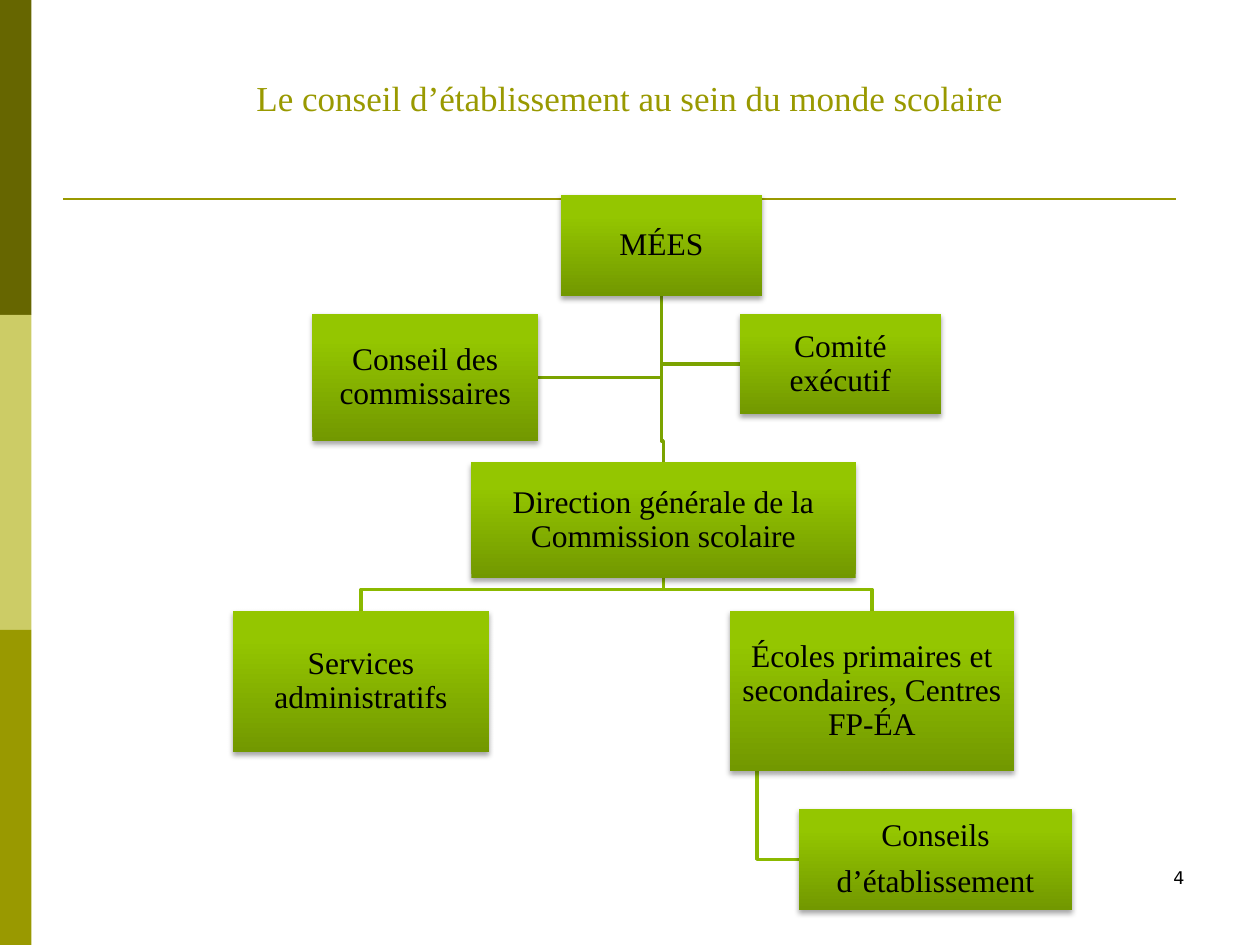
from copy import deepcopy

from lxml.etree import SubElement
from pptx import Presentation
from pptx.dml.color import RGBColor as Color
from pptx.enum.shapes import MSO_CONNECTOR as Connector, MSO_SHAPE as Shape
from pptx.enum.text import MSO_ANCHOR as Anchor, PP_ALIGN as Align
from pptx.oxml.ns import qn
from pptx.util import Inches, Pt

COLORS = {
    "dark": "666600",
    "pale": "CCCC66",
    "olive": "999900",
    "upper_link": "7BA300",
    "lower_link": "8BB900",
    "box_bottom": "729800",
    "box_middle": "94C600",
    "box_top": "95C700",
    "black": "000000",
}
SERIF = "Times New Roman"
SANS = "DejaVu Sans"

BOXES = {
    "ministry": (4.45, 1.55, 1.6, 0.8, "MÉES"),
    "management": (3.74, 3.67, 3.05, 0.92, "Direction générale de la Commission scolaire"),
    "schools": (5.79, 4.85, 2.26, 1.27, "Écoles primaires et secondaires, Centres FP-ÉA"),
    "councils": (6.34, 6.42, 2.17, 0.8, "Conseils\nd’établissement"),
    "services": (1.85, 4.85, 2.03, 1.12, "Services administratifs"),
    "commissioners": (2.48, 2.49, 1.79, 1.01, "Conseil des commissaires"),
    "committee": (5.87, 2.49, 1.6, 0.8, "Comité exécutif"),
}


class SlideBuilder:
    def __init__(self, page):
        self.page = page

    def color(self, name):
        return Color.from_string(COLORS[name])

    def set_text(self, shape, text, size, font, color, align, anchor):
        frame = shape.text_frame
        frame.text = text
        frame.word_wrap = True
        frame.vertical_anchor = anchor
        for para in frame.paragraphs:
            para.alignment = align
            for span in para.runs:
                span.font.size = Pt(size)
                span.font.name = font
                span.font.color.rgb = self.color(color)
        return frame

    def label(self, left, top, width, height, text, size, font, color, align, anchor):
        box = self.page.shapes.add_textbox(*map(Inches, (left, top, width, height)))
        self.set_text(box, text, size, font, color, align, anchor)

    def band(self, left, top, width, height, color):
        band = self.page.shapes.add_shape(
            Shape.RECTANGLE, *map(Inches, (left, top, width, height)))
        band.shadow.inherit = False
        band.fill.solid()
        band.fill.fore_color.rgb = self.color(color)
        band.line.fill.background()

    def rule(self, x1, y1, x2, y2, color, width):
        rule = self.page.shapes.add_connector(
            Connector.STRAIGHT, *map(Inches, (x1, y1, x2, y2)))
        rule.line.color.rgb = self.color(color)
        rule.line.width = Pt(width)
        SubElement(rule._element.spPr, qn("a:effectLst"))

    def link(self, points, color):
        start, *rest = [(Inches(x), Inches(y)) for x, y in points]
        builder = self.page.shapes.build_freeform(*start)
        builder.add_line_segments(rest, close=False)
        link = builder.convert_to_shape()
        link.shadow.inherit = False
        link.fill.background()
        link.line.color.rgb = self.color(color)
        link.line.width = Pt(2)

    def box(self, left, top, width, height, text):
        box = self.page.shapes.add_shape(
            Shape.RECTANGLE, *map(Inches, (left, top, width, height)))
        box.line.fill.background()
        self.shade(box)
        self.cast_shadow(box)
        frame = self.set_text(box, text, 18, SERIF, "black", Align.CENTER, Anchor.MIDDLE)
        frame.margin_left = frame.margin_right = Inches(0.01)
        frame.margin_top = frame.margin_bottom = Inches(0.01)
        for para in frame.paragraphs:
            para.line_spacing = 0.9
        for para in frame.paragraphs[:-1]:
            para.space_after = Pt(7)

    def shade(self, box):
        box.fill.gradient()
        box.fill.gradient_angle = 90
        stop_list = box._element.spPr.find(".//" + qn("a:gsLst"))
        stop_list.append(deepcopy(stop_list[-1]))
        names = ("box_bottom", "box_middle", "box_top")
        for stop, name, position in zip(box.fill.gradient_stops, names, (0, 0.8, 1)):
            stop.color.rgb = self.color(name)
            stop.position = position

    def cast_shadow(self, box):
        box.shadow.inherit = False
        effects = box._element.spPr.find(qn("a:effectLst"))
        shadow = SubElement(effects, qn("a:outerShdw"), blurRad=str(Pt(3.1)),
                            dist=str(Pt(1.8)), dir="5400000", rotWithShape="0")
        tint = SubElement(shadow, qn("a:srgbClr"), val=COLORS["black"])
        SubElement(tint, qn("a:alpha"), val="35000")


def bottom(name):
    left, top, width, height, _ = BOXES[name]
    return left + width / 2, top + height


def top_center(name):
    left, top, width, _, _ = BOXES[name]
    return left + width / 2, top


def side(name, right=False):
    left, top, width, height, _ = BOXES[name]
    return left + width * right, top + height / 2


def down(parent, child):
    start, end = bottom(parent), top_center(child)
    turn = end[1] - 0.17
    return [start, (start[0], turn), (end[0], turn), end]


def across(start, end):
    return [start, (start[0], end[1]), end]


def main():
    deck = Presentation()
    deck.slide_width, deck.slide_height = Inches(10), Inches(7.5)
    slide = SlideBuilder(deck.slides.add_slide(deck.slide_layouts[6]))

    for row, color in enumerate(("dark", "pale", "olive")):
        slide.band(0, 2.5 * row, 0.25, 2.5, color)
    slide.rule(0.5, 1.58, 9.33, 1.58, "olive", 1.5)
    slide.label(0.5, 0.3, 9, 0.69, "Le conseil d’établissement au sein du monde scolaire",
                20, SERIF, "olive", Align.CENTER, Anchor.BOTTOM)
    slide.label(7.17, 6.83, 2.33, 0.5, "4", 10, SANS, "black", Align.RIGHT, Anchor.TOP)

    ministry = bottom("ministry")
    slide.link(across(ministry, side("committee")), "upper_link")
    slide.link(across(ministry, side("commissioners", right=True)), "upper_link")
    slide.link(down("management", "services"), "lower_link")
    slide.link(across((6.01, bottom("schools")[1]), side("councils")), "lower_link")
    slide.link(down("management", "schools"), "lower_link")
    slide.link(down("ministry", "management"), "upper_link")

    for box in BOXES.values():
        slide.box(*box)

    deck.save("out.pptx")


if __name__ == "__main__":
    main()
